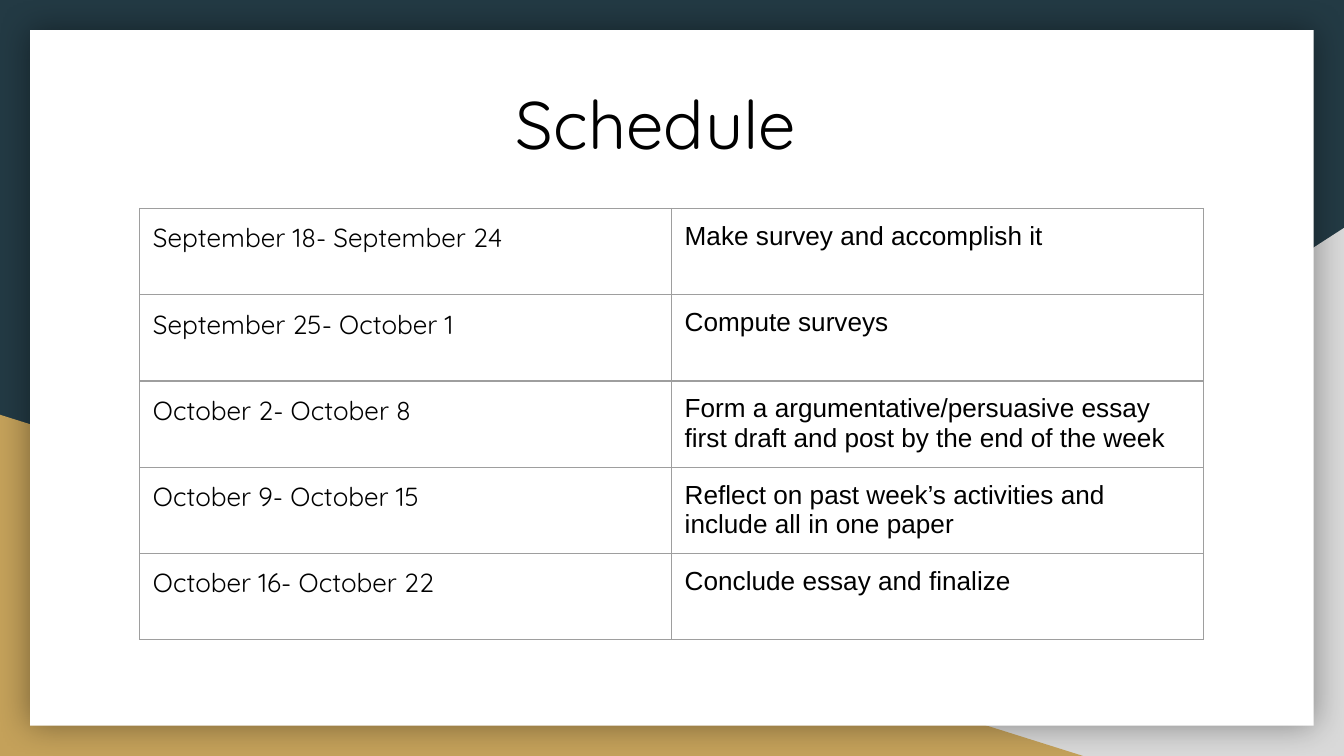
from typing import NamedTuple

import pptx
import pptx.dml.color
import pptx.enum.shapes
import pptx.enum.text
import pptx.oxml
import pptx.util
from lxml import etree

Cm, Pt = pptx.util.Cm, pptx.util.Pt
MSO_SHAPE = pptx.enum.shapes.MSO_SHAPE
A = "http://schemas.openxmlformats.org/drawingml/2006/main"

WIDTH, HEIGHT = 25.4, 14.29
MARGIN = 0.57
INSET = 0.25
COL_WIDTH, ROW_HEIGHT = 10.05, 1.63
HEADING_FONT, BODY_FONT = "Quicksand", "Arial"
BLACK, BORDER = "000000", "9E9E9E"


class Panel(NamedTuple):
    shape: MSO_SHAPE
    left: float
    top: float
    width: float
    height: float
    fill: str
    flipped: bool = False
    shadow: bool = False


class Week(NamedTuple):
    dates: str
    task: str


PANELS = [
    Panel(MSO_SHAPE.RIGHT_TRIANGLE, WIDTH - 15.44, HEIGHT - 9.98, 15.44, 9.98,
          "D9D9D9", flipped=True),
    Panel(MSO_SHAPE.RIGHT_TRIANGLE, 0, HEIGHT - 6.45, 20.47, 6.45, "C4A15A"),
    Panel(MSO_SHAPE.RECTANGLE, MARGIN, MARGIN, WIDTH - 2 * MARGIN,
          HEIGHT - 2 * MARGIN, "FFFFFF", shadow=True),
]

WEEKS = [
    Week("September 18- September 24", "Make survey and accomplish it"),
    Week("September 25- October 1", "Compute surveys"),
    Week("October 2- October 8",
         "Form a argumentative/persuasive essay first draft and post by the end of the week"),
    Week("October 9- October 15",
         "Reflect on past week’s activities and include all in one paper"),
    Week("October 16- October 22", "Conclude essay and finalize"),
]


def set_fill(fill, color: str) -> None:
    fill.solid()
    fill.fore_color.rgb = pptx.dml.color.RGBColor.from_string(color)


def set_font(p, name: str, size: float) -> None:
    p.font.name = name
    p.font.size = Pt(size)
    set_fill(p.font.fill, BLACK)


def set_insets(box) -> None:
    box.margin_left = box.margin_right = Cm(INSET)
    box.margin_top = box.margin_bottom = Cm(INSET)


def add_panel(s, panel: Panel) -> None:
    sp = s.shapes.add_shape(panel.shape, Cm(panel.left), Cm(panel.top),
                            Cm(panel.width), Cm(panel.height))
    set_fill(sp.fill, panel.fill)
    sp.line.fill.background()
    sp.shadow.inherit = False
    sp_pr = sp._element.spPr
    if panel.flipped:
        sp_pr.find(f"{{{A}}}xfrm").set("flipH", "1")
    if panel.shadow:
        sp_pr.find(f"{{{A}}}effectLst").append(pptx.oxml.parse_xml(
            f'<a:outerShdw xmlns:a="{A}" blurRad="{Pt(18)}" dist="0" dir="0" '
            f'algn="ctr" rotWithShape="0"><a:srgbClr val="{BLACK}">'
            '<a:alpha val="40000"/></a:srgbClr></a:outerShdw>'))


def set_borders(cell, color: str, width: float) -> None:
    tc_pr = cell._tc.get_or_add_tcPr()
    for i, side in enumerate(("lnL", "lnR", "lnT", "lnB")):
        ln = etree.Element(f"{{{A}}}{side}", w=str(Pt(width)))
        fill = etree.SubElement(ln, f"{{{A}}}solidFill")
        etree.SubElement(fill, f"{{{A}}}srgbClr", val=color)
        tc_pr.insert(i, ln)


def add_schedule(s, weeks: list[Week], left: float, top: float) -> None:
    table = s.shapes.add_table(len(weeks), 2, Cm(left), Cm(top), Cm(2 * COL_WIDTH),
                               Cm(len(weeks) * ROW_HEIGHT)).table
    table.first_row = table.horz_banding = False
    for column in table.columns:
        column.width = Cm(COL_WIDTH)
    for row, week in zip(table.rows, weeks):
        row.height = Cm(ROW_HEIGHT)
        for cell, text, font in zip(row.cells, week, (HEADING_FONT, BODY_FONT)):
            cell.text = text
            cell.fill.background()
            set_insets(cell)
            set_borders(cell, BORDER, 0.75)
            set_font(cell.text_frame.paragraphs[0], font, 14)


def place_title(s, text: str) -> None:
    sp = s.shapes.title
    sp.left, sp.top, sp.width, sp.height = Cm(9.5), Cm(1.3), Cm(6.4), Cm(1.5)
    tf = sp.text_frame
    tf.text = text
    tf.word_wrap = True
    tf.auto_size = pptx.enum.text.MSO_AUTO_SIZE.NONE
    tf.vertical_anchor = pptx.enum.text.MSO_ANCHOR.TOP
    set_insets(tf)
    p = tf.paragraphs[0]
    p.alignment = pptx.enum.text.PP_ALIGN.LEFT
    set_font(p, HEADING_FONT, 36)
    # Bring the title in front of the card
    s.shapes._spTree.append(sp._element)


def main() -> None:
    prs = pptx.Presentation()
    prs.slide_width, prs.slide_height = Cm(WIDTH), Cm(HEIGHT)
    s = prs.slides.add_slide(prs.slide_layouts[5])

    # Backdrop and white card
    set_fill(s.background.fill, "233A44")
    for panel in PANELS:
        add_panel(s, panel)

    # Content
    add_schedule(s, WEEKS, left=2.64, top=3.94)
    place_title(s, "Schedule")

    prs.save("out.pptx")


if __name__ == "__main__":
    main()
